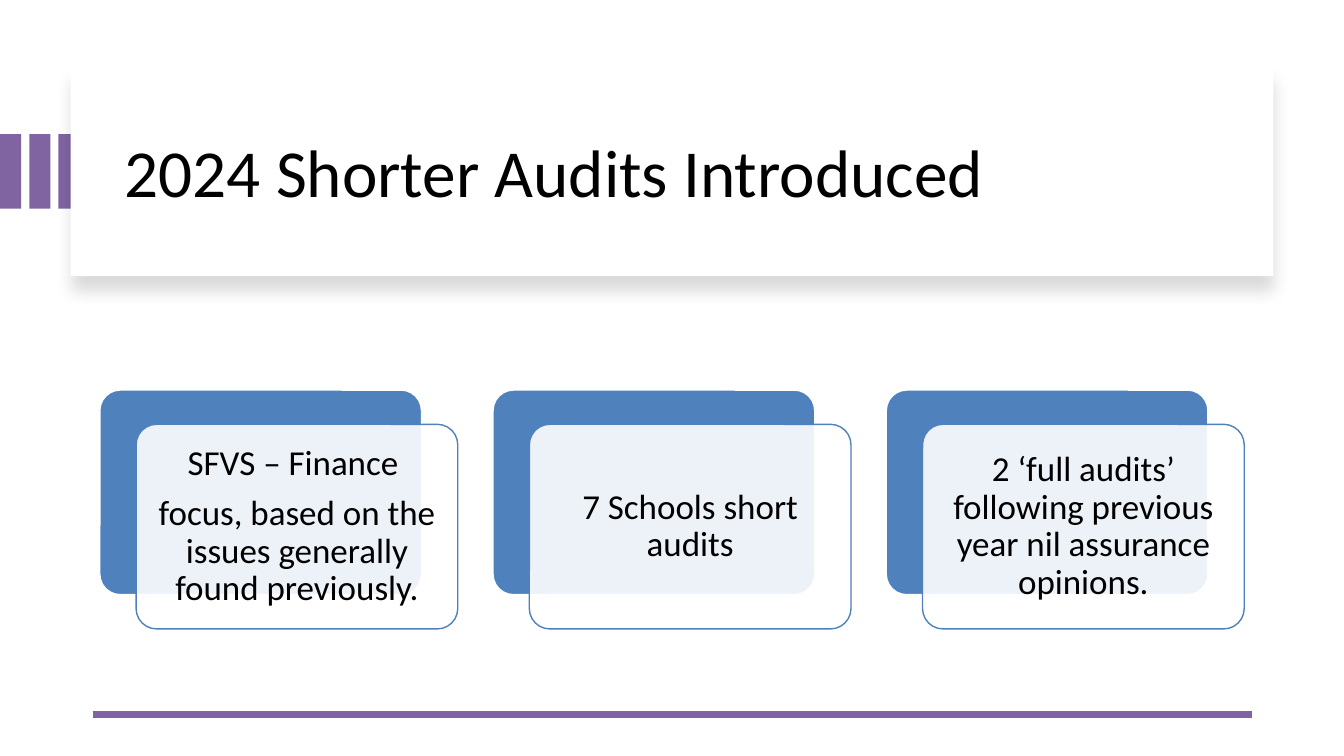
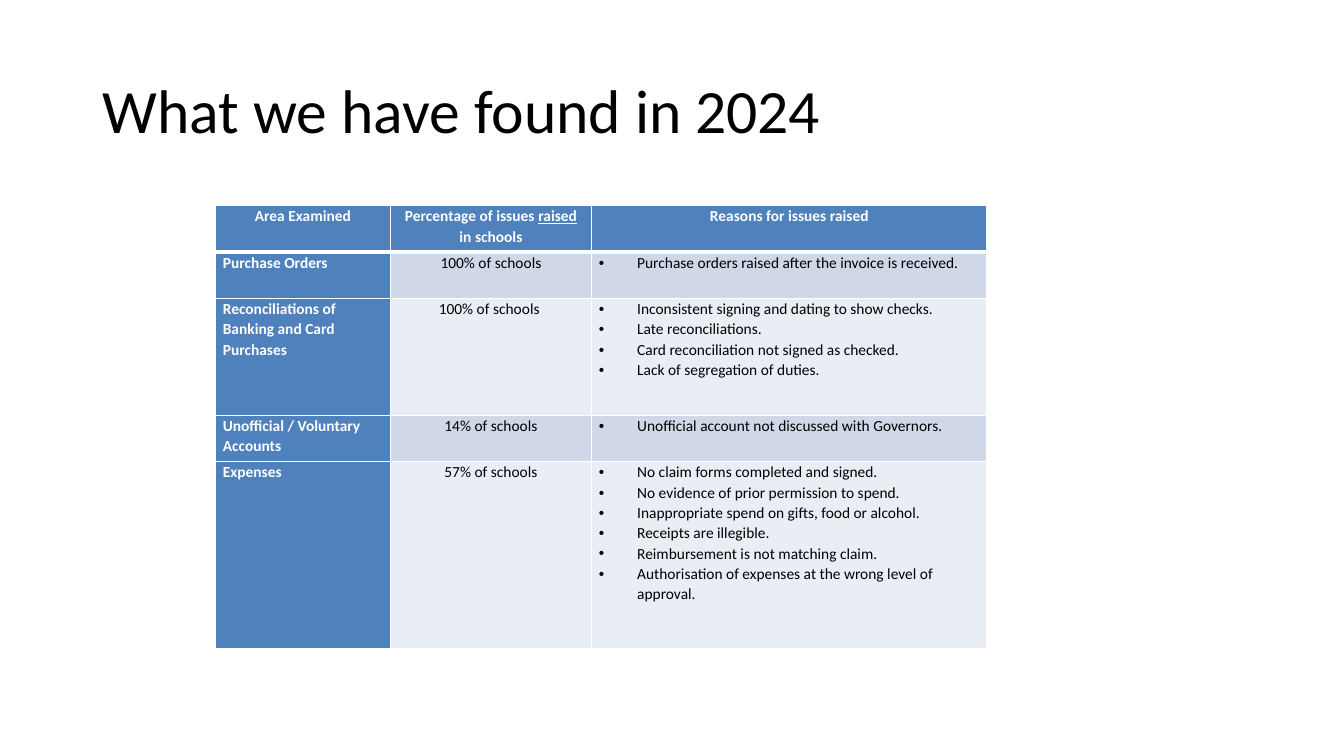
from lxml import etree
from pptx import Presentation
from pptx.dml.color import RGBColor
from pptx.enum.shapes import MSO_CONNECTOR, MSO_SHAPE
from pptx.enum.text import MSO_ANCHOR, PP_ALIGN
from pptx.oxml.ns import qn
from pptx.util import Inches, Pt

BLACK = RGBColor(0x00, 0x00, 0x00)
WHITE = RGBColor(0xFF, 0xFF, 0xFF)
BLUE = RGBColor(0x4F, 0x81, 0xBD)
PURPLE = RGBColor(0x80, 0x64, 0xA2)
BANDS = (RGBColor(0xE9, 0xED, 0xF4), RGBColor(0xD0, 0xD8, 0xE8))
FONT = "Calibri"
LEFT, CENTER = PP_ALIGN.LEFT, PP_ALIGN.CENTER
TOP, MIDDLE = MSO_ANCHOR.TOP, MSO_ANCHOR.MIDDLE
RECT, ROUND = MSO_SHAPE.RECTANGLE, MSO_SHAPE.ROUNDED_RECTANGLE
STRAIGHT = MSO_CONNECTOR.STRAIGHT


def node(parent, tag, **attrs):
    """Append a child element with the given attributes."""
    child = etree.SubElement(parent, qn(tag))
    for key, value in attrs.items():
        child.set(key, str(value))
    return child


class Deck:
    def __init__(self):
        self.prs = Presentation()
        self.prs.slide_width = Inches(13.33)
        self.prs.slide_height = Inches(7.5)
        self.slide = None

    def page(self):
        self.slide = self.prs.slides.add_slide(self.prs.slide_layouts[6])

    def box(self, kind, x, y, w, h, fill, line=None, alpha=None):
        shape = self.slide.shapes.add_shape(
            kind, Inches(x), Inches(y), Inches(w), Inches(h))
        shape.shadow.inherit = False
        shape.fill.solid()
        shape.fill.fore_color.rgb = fill
        if kind == ROUND:
            shape.adjustments[0] = 0.1
        if line is None:
            shape.line.fill.background()
        else:
            shape.line.color.rgb = line
            shape.line.width = Pt(1)
        if alpha:
            color = shape._element.spPr.find(qn("a:solidFill"))[0]
            node(color, "a:alpha", val=alpha * 1000)
        return shape

    def shade(self, shape):
        """Give a shape a soft shadow that falls straight down."""
        effects = shape._element.spPr.find(qn("a:effectLst"))
        outer = node(effects, "a:outerShdw", blurRad=Pt(11), dist=Pt(10),
                     dir=5400000, algn="t", rotWithShape=0)
        color = node(outer, "a:srgbClr", val=BLACK)
        node(color, "a:alpha", val=15000)

    def put(self, frame, lines, size, color=BLACK, bold=False, align=LEFT,
            space=0.9, after=0, last=0, bullet=False):
        """Fill a text frame; words between underscores are underlined."""
        frame.word_wrap = True
        for i, line in enumerate(lines):
            para = frame.paragraphs[0] if i == 0 else frame.add_paragraph()
            if bullet:
                props = para._p.get_or_add_pPr()
                props.set("marL", str(Inches(0.38)))
                props.set("indent", str(-Inches(0.38)))
                node(props, "a:buFont", typeface="Arial")
                node(props, "a:buChar", char="•")
            para.alignment = align
            para.line_spacing = space
            para.space_after = Pt(last if i == len(lines) - 1 else after)
            font = para.font
            font.name, font.size, font.bold = FONT, Pt(size), bold
            font.color.rgb = color
            for j, part in enumerate(line.split("_")):
                run = para.add_run()
                run.text = part
                if j % 2:
                    run.font.underline = True

    def text(self, x, y, w, h, lines, size, inset=0.05, **style):
        frame = self.slide.shapes.add_textbox(
            Inches(x), Inches(y), Inches(w), Inches(h)).text_frame
        frame.vertical_anchor = MIDDLE
        frame.margin_top = frame.margin_bottom = Inches(inset)
        self.put(frame, lines, size, **style)

    def title(self, x, y, w, h, words, size):
        self.text(x, y, w, h, [words], size)

    def rule(self, x, y, end):
        line = self.slide.shapes.add_connector(
            STRAIGHT, Inches(x), Inches(y), Inches(end), Inches(y))
        line.line.color.rgb = PURPLE
        line.line.width = Pt(4.5)
        node(line._element.spPr, "a:effectLst")

    def card(self, x, y, lines):
        w, h = 3.19, 2.03
        self.box(ROUND, x, y, w, h, BLUE, WHITE)
        x, y = x + 0.36, y + 0.34
        self.box(ROUND, x, y, w, h, WHITE, BLUE, alpha=90)
        self.text(x + 0.06, y + 0.06, w - 0.12, h - 0.12, lines, 25,
                  inset=0.1, align=CENTER, after=8.75, last=8.75)

    def edge(self, cell, widths):
        """Draw white cell borders: left, right, top, bottom."""
        props = cell._tc.get_or_add_tcPr()
        for i, (side, width) in enumerate(zip("LRTB", widths)):
            line = node(props, f"a:ln{side}", w=Pt(width))
            node(node(line, "a:solidFill"), "a:srgbClr", val=WHITE)
            props.insert(i, line)

    def table(self, x, y, cols, rows, data):
        table = self.slide.shapes.add_table(
            len(rows), len(cols), Inches(x), Inches(y),
            Inches(sum(cols)), Inches(sum(rows))).table
        table.first_row = table.horz_banding = False
        for col, width in zip(table.columns, cols):
            col.width = Inches(width)
        for row, height in zip(table.rows, rows):
            row.height = Inches(height)
        for r, line in enumerate(data):
            for c, lines in enumerate(line):
                cell = table.cell(r, c)
                head = r == 0 or c == 0
                cell.margin_left = cell.margin_right = Inches(0.07)
                cell.margin_top = cell.margin_bottom = 0
                cell.vertical_anchor = TOP
                cell.fill.solid()
                cell.fill.fore_color.rgb = BLUE if head else BANDS[r % 2]
                self.edge(cell, (1, 1, 3 if r == 1 else 1,
                                 3 if r == 0 else 1))
                self.put(cell.text_frame, lines, 11,
                         color=WHITE if head else BLACK, bold=head,
                         align=CENTER if r == 0 or c == 1 else LEFT,
                         space=1.07, last=8, bullet=r > 0 and c == 2)


CARDS = [
    ["SFVS – Finance ",
     "focus, based on the issues generally found previously."],
    ["7 Schools short audits"],
    ["2 ‘full audits’ following previous year nil assurance opinions."],
]
ISSUES = [
    (["Area Examined"], ["Percentage of issues _raised_ in schools"],
     ["Reasons for issues raised"]),
    (["Purchase Orders"], ["100% of schools"],
     ["Purchase orders raised after the invoice is received."]),
    (["Reconciliations of Banking and Card Purchases"], ["100% of schools "],
     ["Inconsistent signing and dating to show checks.",
      "Late reconciliations.",
      "Card reconciliation not signed as checked.",
      "Lack of segregation of duties."]),
    (["Unofficial / Voluntary Accounts"], ["14% of schools"],
     ["Unofficial account not discussed with Governors."]),
    (["Expenses"], ["57% of schools"],
     ["No claim forms completed and signed.",
      "No evidence of prior permission to spend.",
      "Inappropriate spend on gifts, food or alcohol.",
      "Receipts are illegible.",
      "Reimbursement is not matching claim.",
      "Authorisation of expenses at the wrong level of approval."]),
]


def main():
    deck = Deck()

    # Shorter audits: title panel with side bars, then three cards
    deck.page()
    for i in range(3):
        deck.box(RECT, 0.29 * i, 1.33, 0.21, 0.74, PURPLE)
    deck.shade(deck.box(RECT, 0.7, 0.67, 11.93, 2.07, WHITE))
    deck.title(1.14, 0.89, 11.13, 1.7, "2024 Shorter Audits Introduced", 48)
    deck.rule(0.92, 7.09, 12.42)
    for i, lines in enumerate(CARDS):
        deck.card(0.99 + 3.9 * i, 3.87, lines)

    # Findings: table of issues by area
    deck.page()
    deck.title(0.92, 0.4, 11.5, 1.45, "What we have found in 2024", 44)
    deck.table(2.14, 2.04, (1.73, 2, 3.92), (0.46, 0.46, 1.16, 0.46, 1.86),
               ISSUES)

    deck.prs.save("out.pptx")


if __name__ == "__main__":
    main()
